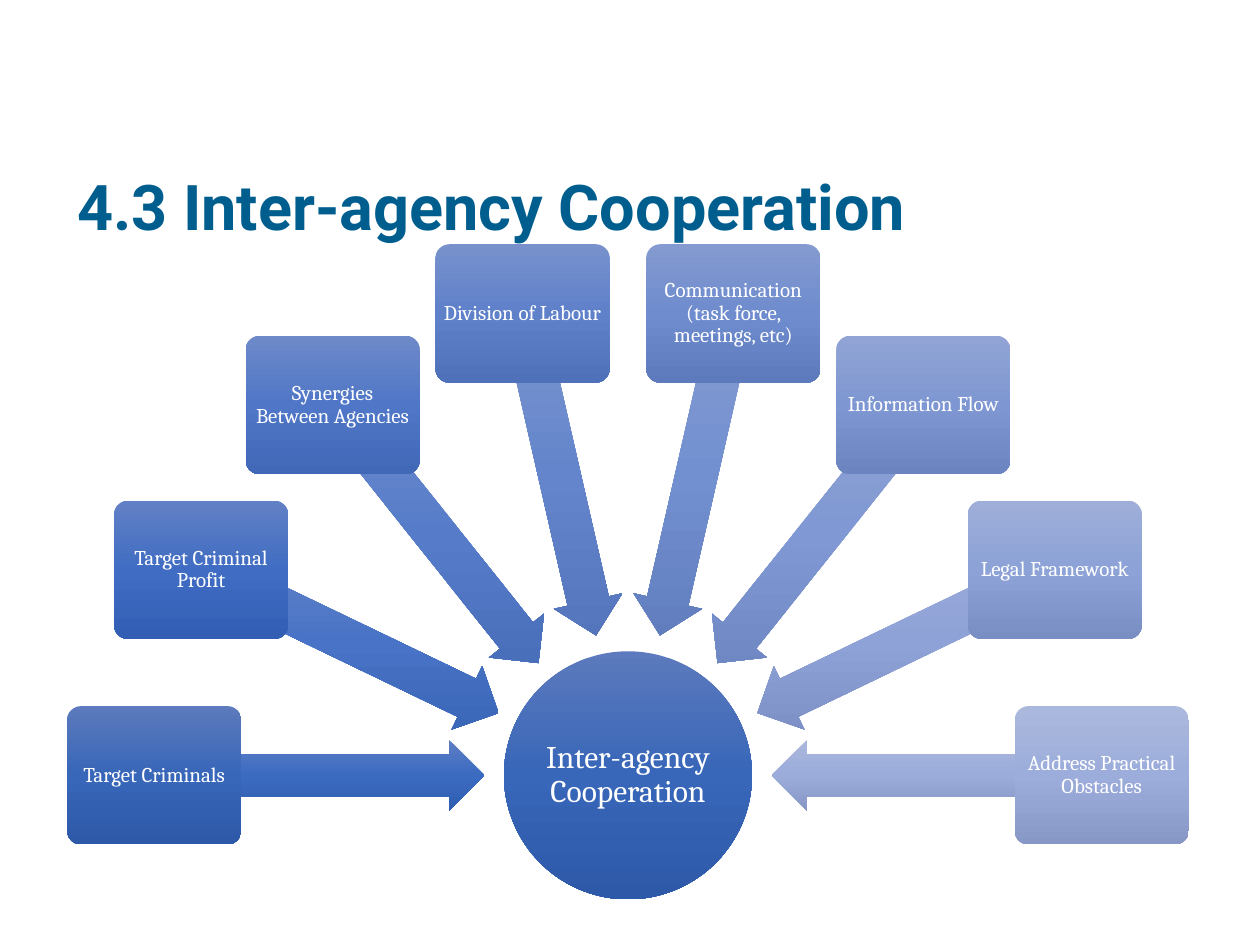
import math

from pptx import Presentation
from pptx.dml.color import RGBColor
from pptx.enum.shapes import MSO_SHAPE
from pptx.enum.text import MSO_ANCHOR, MSO_AUTO_SIZE, PP_ALIGN
from pptx.oxml import parse_xml
from pptx.oxml.ns import nsdecls, qn
from pptx.util import Cm, Pt

ELLIPSE = MSO_SHAPE.OVAL
ROUNDED = MSO_SHAPE.ROUNDED_RECTANGLE
LEFT_ARROW = MSO_SHAPE.LEFT_ARROW
MIDDLE = MSO_ANCHOR.MIDDLE
LEFT, CENTER = PP_ALIGN.LEFT, PP_ALIGN.CENTER
NO_AUTOFIT = MSO_AUTO_SIZE.NONE
TITLE_ONLY = 5

HUB_X, HUB_Y, HUB_SIZE = 12.66, 15.63, 5
BOX_WIDTH, BOX_HEIGHT, BOX_RADIUS = 3.51, 2.79, 9.55
ARROW_WIDTH, ARROW_HEIGHT, ARROW_RADIUS = 6.65, 1.42, 6.22

HUB_STOPS = ("5C7ABD", "3866B8", "2D59A8")
# Label, box gradient, arrow gradient; clockwise from the left
SPOKES = [
    ("Target Criminals", HUB_STOPS, ("5E7EC4", "3B6BC1", "2F5EB1")),
    ("Target Criminal Profit",
     ("6280C5", "406DC3", "325FB4"), ("6785C7", "4873C6", "3965B6")),
    ("Synergies Between Agencies",
     ("6D89C8", "5077C7", "4168B7"), ("718DCB", "567CC9", "476CB8")),
    ("Division of Labour",
     ("7891CC", "5F81CA", "4F71B9"), ("7C95CE", "6485CC", "5475BB")),
    ("Communication (task force, meetings, etc)",
     ("849AD0", "6F8CCE", "5D7ABC"), ("879DD2", "728FD0", "617DBD")),
    ("Information Flow",
     ("91A4D5", "7E97D2", "6C84BF"), ("93A6D5", "8098D3", "6D85C0")),
    ("Legal Framework",
     ("9EAED9", "8DA2D6", "798EC3"), ("9FAED9", "8EA2D7", "7A8EC3")),
    ("Address Practical Obstacles",
     ("ABB8DD", "9CADDB", "8798C6"), ("AAB7DD", "9BACDB", "8697C6")),
]


def color(value):
    return RGBColor.from_string(value)


def fill_vertical_gradient(shape, stops):
    """Fill top to bottom in three stops, whatever the shape's rotation."""
    stop_xml = "".join(
        f'<a:gs pos="{index * 50000}"><a:srgbClr val="{value}"/></a:gs>'
        for index, value in enumerate(stops))
    gradient = parse_xml(
        f'<a:gradFill {nsdecls("a")} rotWithShape="0"><a:gsLst>{stop_xml}</a:gsLst>'
        '<a:lin ang="5400000" scaled="0"/></a:gradFill>')
    shape._element.spPr.find(qn("a:prstGeom")).addnext(gradient)


class RadialSlide:
    title_font, title_color = "Roboto", "005E8E"
    label_font, label_color = "Cambria", "FFFFFF"
    line_spacing = 0.9

    def __init__(self, presentation):
        self.slide = presentation.slides.add_slide(
            presentation.slide_layouts[TITLE_ONLY])

    def set_text(self, shape, text, font_name, size, font_color, alignment, bold=False):
        frame = shape.text_frame
        frame.text = text
        frame.word_wrap = True
        frame.auto_size = NO_AUTOFIT
        frame.vertical_anchor = MIDDLE
        paragraph = frame.paragraphs[0]
        paragraph.alignment = alignment
        paragraph.line_spacing = self.line_spacing
        font = paragraph.runs[0].font
        font.name, font.size, font.bold = font_name, Pt(size), bold
        font.color.rgb = color(font_color)

    def title(self, text, left, top, width, height):
        title = self.slide.shapes.title
        title.left, title.top = Cm(left), Cm(top)
        title.width, title.height = Cm(width), Cm(height)
        self.set_text(title, text, self.title_font, 36, self.title_color, LEFT, True)

    def centered_shape(self, kind, x, y, width, height, stops):
        """Add a gradient shape whose middle is at x, y."""
        shape = self.slide.shapes.add_shape(
            kind, Cm(x - width / 2), Cm(y - height / 2), Cm(width), Cm(height))
        shape.shadow.inherit = False
        shape.line.fill.background()
        fill_vertical_gradient(shape, stops)
        return shape

    def label(self, shape, text, size, inset):
        frame = shape.text_frame
        frame.margin_left = frame.margin_right = Cm(inset)
        frame.margin_top = frame.margin_bottom = Cm(inset)
        self.set_text(shape, text, self.label_font, size, self.label_color, CENTER)

    def hub(self, text):
        hub = self.centered_shape(ELLIPSE, HUB_X, HUB_Y, HUB_SIZE, HUB_SIZE, HUB_STOPS)
        self.label(hub, text, 18, 0.03)

    def spoke(self, angle, text, box_stops, arrow_stops):
        """Add an arrow to the hub and its box, at an angle in degrees."""
        across, down = math.cos(math.radians(angle)), math.sin(math.radians(angle))
        arrow = self.centered_shape(
            LEFT_ARROW, HUB_X + ARROW_RADIUS * across, HUB_Y + ARROW_RADIUS * down,
            ARROW_WIDTH, ARROW_HEIGHT, arrow_stops)
        arrow.adjustments[0], arrow.adjustments[1] = 0.6, 0.5
        arrow.rotation = angle % 360
        box = self.centered_shape(
            ROUNDED, HUB_X + BOX_RADIUS * across, HUB_Y + BOX_RADIUS * down,
            BOX_WIDTH, BOX_HEIGHT, box_stops)
        box.adjustments[0] = 0.1
        self.label(box, text, 12, 0.07)


def main():
    presentation = Presentation()
    presentation.slide_width, presentation.slide_height = Cm(25.4), Cm(19.05)
    radial = RadialSlide(presentation)
    radial.title("4.3 Inter-agency Cooperation", 1.3, 3.53, 22.86, 1.4)
    radial.hub("Inter-agency Cooperation")
    step = 180 / (len(SPOKES) - 1)
    for index, (text, box_stops, arrow_stops) in enumerate(SPOKES):
        radial.spoke(180 + index * step, text, box_stops, arrow_stops)
    presentation.save("out.pptx")


if __name__ == "__main__":
    main()
